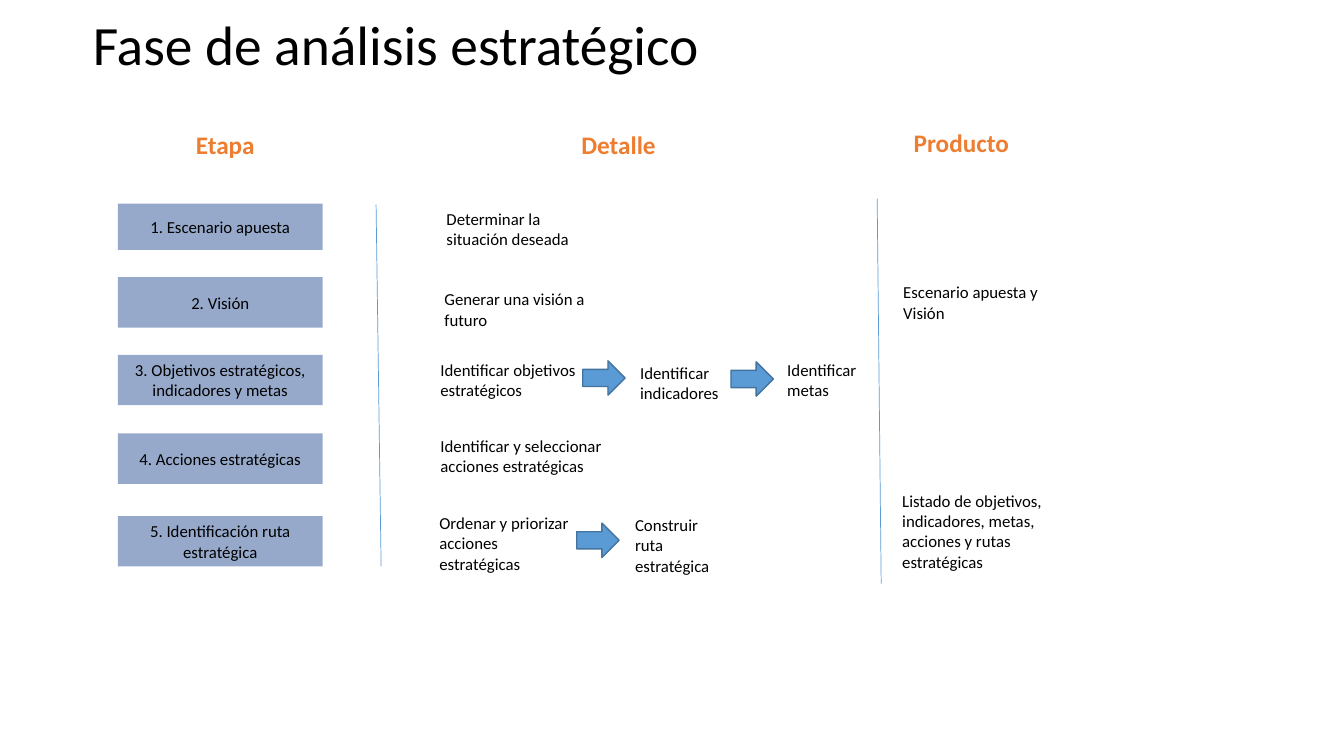
from pptx import Presentation
from pptx import util as u
from pptx.dml.color import RGBColor
from pptx.enum import shapes, text
from pptx.oxml.ns import qn
from lxml import etree

PX = 9144
BLACK = RGBColor(0x00, 0x00, 0x00)
ORANGE = RGBColor(0xED, 0x7D, 0x31)
NAVY = RGBColor(0x2F, 0x55, 0x97)
BLUE = RGBColor(0x5B, 0x9B, 0xD5)
STEEL = RGBColor(0x43, 0x73, 0x9E)

LEFT, CENTER = text.PP_ALIGN.LEFT, text.PP_ALIGN.CENTER
TOP, MIDDLE = text.MSO_ANCHOR.TOP, text.MSO_ANCHOR.MIDDLE
BODY = {"name": "Calibri", "size": u.Pt(12), "bold": False}
HEADING = {"name": "Calibri", "size": u.Pt(18), "bold": True}
TITLE = {"name": "Calibri", "size": u.Pt(39.6), "bold": False}

STAGES = [
    ("1. Escenario apuesta", 81, 46),
    ("2. Visión", 154, 50),
    ("3. Objetivos estratégicos, indicadores y metas", 231, 50),
    ("4. Acciones estratégicas", 309, 50),
    ("5. Identificación ruta estratégica", 391, 50),
]
DETAILS = [
    ("Determinar la situación deseada", 60, 81, 151, 51),
    ("Generar una visión a futuro", 58, 161, 180, 50),
    ("Identificar objetivos estratégicos", 54, 231, 180, 51),
    ("Identificar indicadores", 252, 234, 102, 50),
    ("Identificar metas", 398, 231, 93, 51),
    ("Identificar y seleccionar acciones estratégicas", 54, 306, 180, 71),
    ("Ordenar y priorizar acciones estratégicas", 53, 383, 154, 71),
    ("Construir ruta estratégica", 247, 385, 108, 71),
]
ARROWS = [(205, 237), (199, 398), (352, 238)]
PRODUCTS = [
    ("Escenario apuesta y Visión", 29, 154, 163, 51),
    ("Listado de objetivos, indicadores, metas, acciones y rutas estratégicas",
     28, 361, 182, 91),
]


def px(*lengths):
    """Turn pixel lengths into EMU."""
    return [u.Emu(length * PX) for length in lengths]


def write(shape, words, style, color=BLACK, align=LEFT, anchor=TOP):
    """Put one formatted paragraph into a shape and return it."""
    frame = shape.text_frame
    frame.text = words
    settings = {"word_wrap": True, "vertical_anchor": anchor,
                "auto_size": text.MSO_AUTO_SIZE.NONE}
    for name, value in settings.items():
        setattr(frame, name, value)
    paragraph = frame.paragraphs[0]
    paragraph.alignment = align
    font = paragraph.runs[0].font
    for name, value in style.items():
        setattr(font, name, value)
    font.color.rgb = color
    return paragraph


def add_label(slide, box, words, style=BODY, color=BLACK, align=LEFT):
    """Add a wrapping text box."""
    write(slide.shapes.add_textbox(*px(*box)), words, style, color, align)


def add_heading(slide, left, top, words):
    """Add a column heading."""
    add_label(slide, (left, top, 193, 40), words, HEADING, ORANGE, CENTER)


def add_block(slide, kind, box, color):
    """Add a filled preset shape without line or shadow."""
    shape = slide.shapes.add_shape(kind, *px(*box))
    shape.shadow.inherit = False
    shape.fill.solid()
    shape.fill.fore_color.rgb = color
    shape.line.fill.background()
    return shape


def add_divider(slide, *ends):
    """Add a thin line between two columns."""
    line = slide.shapes.add_connector(shapes.MSO_CONNECTOR.STRAIGHT, *px(*ends))
    line.line.color.rgb = BLUE
    line.line.width = u.Pt(0.5)
    etree.SubElement(line._element.spPr, qn("a:effectLst"))


def add_title(slide, box):
    """Place and format the title placeholder."""
    title = slide.shapes.title
    title.left, title.top, title.width, title.height = px(*box)
    paragraph = write(title, "Fase de análisis estratégico", TITLE, anchor=MIDDLE)
    paragraph.line_spacing = 0.9


def add_stages(slide, left, top, width):
    """Draw the column of translucent stage blocks."""
    add_heading(slide, left + 10, top + 2, "Etapa")
    for words, offset, height in STAGES:
        box = (left, top + offset, width, height)
        stage = add_block(slide, shapes.MSO_SHAPE.RECTANGLE, box, NAVY)
        tint = stage._element.spPr.find(qn("a:solidFill"))[0]
        etree.SubElement(tint, qn("a:alpha"), val="50000")
        write(stage, words, BODY, align=CENTER, anchor=MIDDLE)


def add_labels(slide, left, top, labels):
    """Place body labels relative to a column corner."""
    for words, x, y, width, height in labels:
        add_label(slide, (left + x, top + y, width, height), words)


def add_details(slide, left, top):
    """Draw the detail column with its divider and arrows."""
    add_heading(slide, left + 144, top + 2, "Detalle")
    add_divider(slide, left, top + 82, left + 5, top + 441)
    add_labels(slide, left, top, DETAILS)
    for x, y in ARROWS:
        box = (left + x, top + y, 42, 34)
        arrow = add_block(slide, shapes.MSO_SHAPE.RIGHT_ARROW, box, BLUE)
        arrow.line.color.rgb = STEEL
        arrow.line.width = u.Pt(1)


def add_products(slide, left, top):
    """Draw the product column with its divider."""
    add_heading(slide, left, top, "Producto")
    add_divider(slide, left + 13, top + 76, left + 17, top + 458)
    add_labels(slide, left, top, PRODUCTS)


def main():
    """Build the slide and save it."""
    presentation = Presentation()
    presentation.slide_width, presentation.slide_height = px(1333, 750)
    slide = presentation.slides.add_slide(presentation.slide_layouts[5])
    add_title(slide, (82, 21, 1150, 52))
    add_stages(slide, 117, 121, 203)
    add_details(slide, 373, 121)
    add_products(slide, 857, 121)
    presentation.save("out.pptx")


if __name__ == "__main__":
    main()
